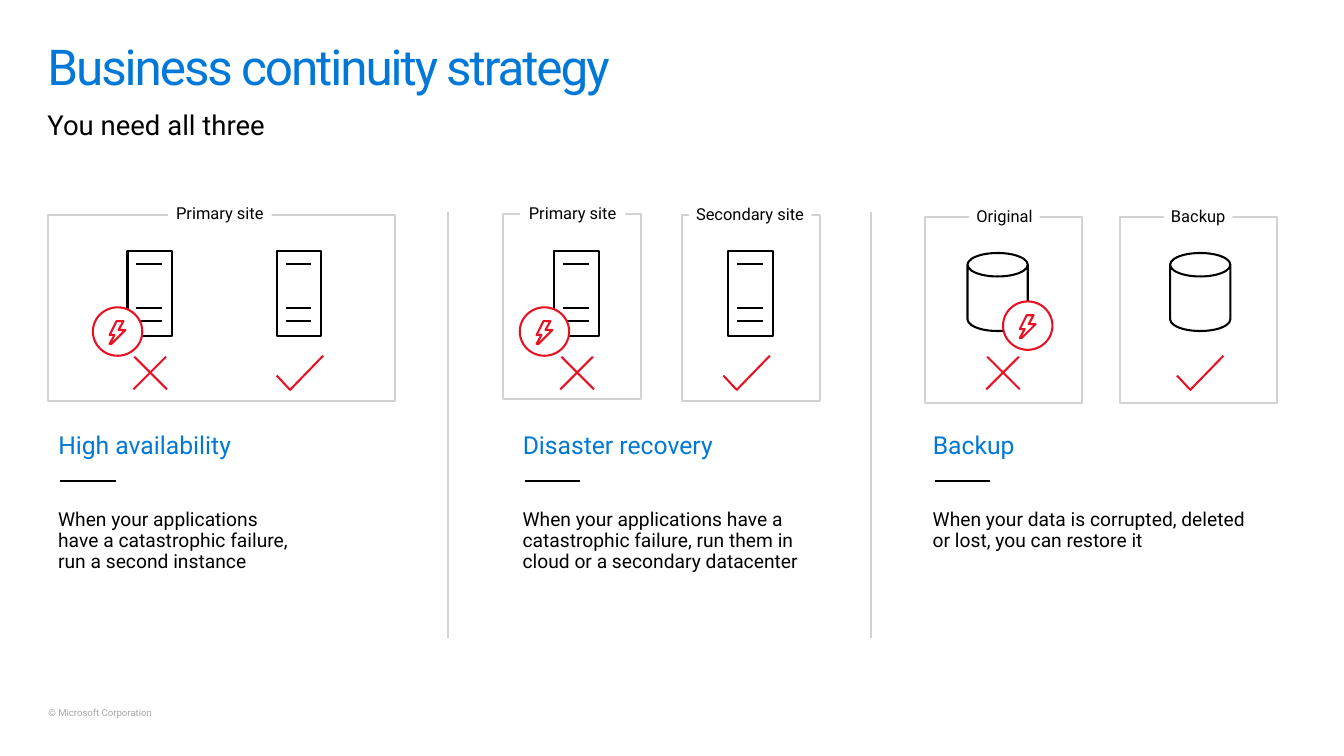
from dataclasses import dataclass

from lxml import etree
from pptx import Presentation
from pptx.dml.color import RGBColor
from pptx.enum.shapes import MSO_CONNECTOR, MSO_SHAPE
from pptx.enum.text import MSO_ANCHOR, MSO_AUTO_SIZE, PP_ALIGN
from pptx.oxml.ns import qn
from pptx.util import Pt

STRAIGHT = MSO_CONNECTOR.STRAIGHT
RECTANGLE, OVAL, CAN = MSO_SHAPE.RECTANGLE, MSO_SHAPE.OVAL, MSO_SHAPE.CAN
TOP, MIDDLE = MSO_ANCHOR.TOP, MSO_ANCHOR.MIDDLE
LEFT, CENTER = PP_ALIGN.LEFT, PP_ALIGN.CENTER
NO_AUTOFIT = MSO_AUTO_SIZE.NONE
PX = 9144


@dataclass(frozen=True)
class Theme:
    font: str = "Roboto"
    blue: str = "0078D7"
    red: str = "E81123"
    black: str = "000000"
    white: str = "FFFFFF"
    frame: str = "D2D2D2"
    footer: str = "A6A6A6"
    title_size: int = 36
    subtitle_size: int = 20
    heading_size: int = 18
    body_size: int = 14
    label_size: int = 12
    footer_size: int = 7
    stroke: float = 1.5


THEME = Theme()

SERVER = [
    [(0, 0), (45, 0), (45, 86), (0, 86)],
    [(9, 13), (35, 13)],
    [(9, 58), (35, 58)],
    [(9, 71), (35, 71)],
]
BOLT = [[(2, 23), (16, 9), (9, 9), (14, 0), (7, 0), (0, 14), (5, 14), (0, 23)]]

SITES = [
    ("Primary site", (49, 218, 351, 188), (170, 204, 105, 26)),
    ("Primary site", (509, 217, 140, 187), (526, 207, 107, 20)),
    ("Secondary site", (690, 218, 140, 188), (697, 209, 124, 18)),
    ("Original", (936, 220, 159, 188), (981, 211, 71, 18)),
    ("Backup", (1133, 220, 159, 188), (1178, 211, 69, 18)),
]

STRATEGIES = [
    (39, "High availability", 263,
     "When your applications have a catastrophic failure, run a second instance"),
    (509, "Disaster recovery", 336,
     "When your applications have a catastrophic failure, "
     "run them in cloud or a secondary datacenter"),
    (924, "Backup", 336,
     "When your data is corrupted, deleted or lost, you can restore it"),
]


def rgb(color):
    return RGBColor.from_string(color)


def place(shape, bounds):
    shape.left, shape.top, shape.width, shape.height = (n * PX for n in bounds)


def write(shape, text, size, color, insets=(0, 0, 0, 0), align=LEFT,
          anchor=TOP, wrap=True, spacing=0.9, after=0):
    frame = shape.text_frame
    frame.text = text
    frame.word_wrap = wrap
    frame.auto_size = NO_AUTOFIT
    frame.vertical_anchor = anchor
    frame.margin_left, frame.margin_top, frame.margin_right, frame.margin_bottom = (
        n * PX for n in insets)
    para = frame.paragraphs[0]
    para.alignment = align
    para.line_spacing = spacing
    para.space_before = Pt(0)
    para.space_after = Pt(after)
    span = para.runs[0]
    span.font.name = THEME.font
    span.font.size = Pt(size)
    span.font.color.rgb = rgb(color)
    return para


def add_text(page, bounds, text, size, color, **options):
    box = page.shapes.add_textbox(*(n * PX for n in bounds))
    write(box, text, size, color, **options)


def paint(shape, fill=None, line=None):
    shape.shadow.inherit = False
    if fill:
        shape.fill.solid()
        shape.fill.fore_color.rgb = rgb(fill)
    else:
        shape.fill.background()
    if line:
        shape.line.color.rgb = rgb(line)
        shape.line.width = Pt(THEME.stroke)
    else:
        shape.line.fill.background()


def add_preset(page, kind, bounds, fill=None, line=None):
    shape = page.shapes.add_shape(kind, *(n * PX for n in bounds))
    paint(shape, fill, line)
    return shape


def add_line(page, start, end, color):
    line = page.shapes.add_connector(STRAIGHT, *(n * PX for n in start + end))
    line.line.color.rgb = rgb(color)
    line.line.width = Pt(THEME.stroke)
    etree.SubElement(line._element.spPr, qn("a:effectLst"))


def add_outline(page, left, top, contours, color):
    builder = page.shapes.build_freeform(*contours[0][0], scale=PX)
    for index, points in enumerate(contours):
        if index:
            builder.move_to(*points[0])
        builder.add_line_segments(points[1:], close=len(points) > 2)
    paint(builder.convert_to_shape(left * PX, top * PX), line=color)


def add_site(page, label, frame, label_bounds):
    add_preset(page, RECTANGLE, frame, line=THEME.frame)
    tag = add_preset(page, RECTANGLE, label_bounds, fill=THEME.white)
    write(tag, label, THEME.label_size, THEME.black, align=CENTER, anchor=MIDDLE)


def add_server(page, left, top):
    add_outline(page, left, top, SERVER, THEME.black)


def add_database(page, left, top):
    database = add_preset(page, CAN, (left, top, 61, 79), line=THEME.black)
    database.adjustments[0] = 0.39


def add_failure(page, left, top):
    add_preset(page, OVAL, (left, top, 50, 49), THEME.white, THEME.red)
    add_outline(page, left + 17, top + 14, BOLT, THEME.red)


def add_cross(page, left):
    add_line(page, (left, 394), (left + 33, 361), THEME.red)
    add_line(page, (left + 1, 361), (left + 34, 394), THEME.red)


def add_check(page, left):
    add_line(page, (left, 380), (left + 13, 394), THEME.red)
    add_line(page, (left + 13, 395), (left + 47, 360), THEME.red)


def add_strategy(page, left, heading, width, body):
    add_text(page, (left, 422, 336, 67), heading, THEME.heading_size, THEME.blue,
             insets=(20, 16, 20, 16))
    add_line(page, (left + 22, 487), (left + 78, 487), THEME.black)
    add_text(page, (left + 10, 506, width, 84), body, THEME.body_size, THEME.black,
             insets=(10, 10, 10, 10))


def add_headline(page):
    title, body = page.placeholders
    place(title, (48, 25, 1265, 85))
    para = write(title, "Business continuity strategy", THEME.title_size, THEME.blue,
                 insets=(0, 18, 0, 0))
    para.runs[0]._r.get_or_add_rPr().set("spc", "-150")
    place(body, (48, 109, 1265, 34))
    para = write(body, "You need all three", THEME.subtitle_size, THEME.black,
                 spacing=1.0, after=14)
    properties = para._p.get_or_add_pPr()
    properties.set("marL", "0")
    properties.set("indent", "0")
    etree.SubElement(properties, qn("a:buNone"))


def main():
    deck = Presentation()
    deck.slide_width, deck.slide_height = 1360 * PX, 765 * PX
    page = deck.slides.add_slide(deck.slide_layouts[1])
    add_headline(page)
    for site in SITES:
        add_site(page, *site)
    for left in (129, 280, 561, 737):
        add_server(page, left, 254)
    for left in (979, 1184):
        add_database(page, left, 256)
    for left, top in ((94, 311), (526, 311), (1015, 305)):
        add_failure(page, left, top)
    for left in (135, 567, 998):
        add_cross(page, left)
    for left in (280, 732, 1191):
        add_check(page, left)
    for left in (453, 881):
        add_line(page, (left, 215), (left, 646), THEME.frame)
    for strategy in STRATEGIES:
        add_strategy(page, *strategy)
    add_text(page, (49, 717, 110, 11), "© Microsoft Corporation",
             THEME.footer_size, THEME.footer, wrap=False, after=6)
    deck.save("out.pptx")


if __name__ == "__main__":
    main()
